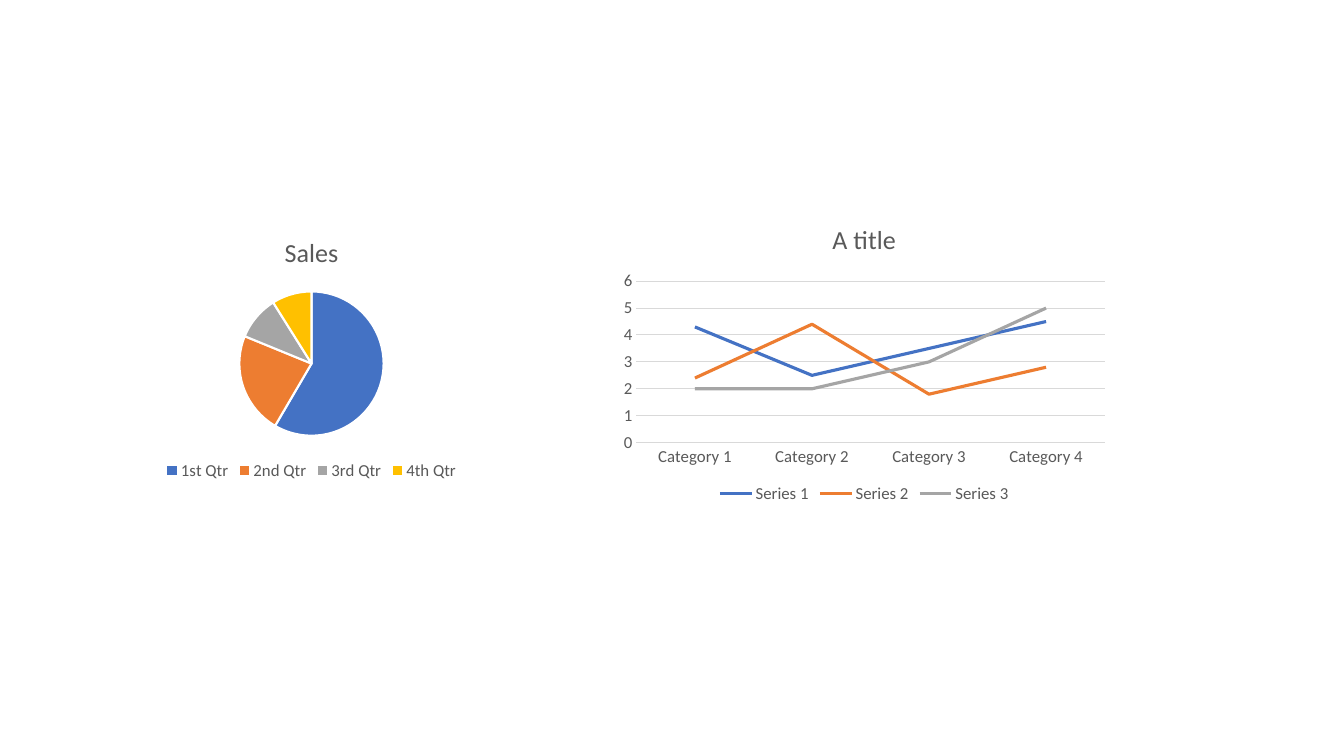
from dataclasses import dataclass

from pptx import Presentation
from pptx.chart.chart import Chart
from pptx.chart.data import CategoryChartData
from pptx.dml.color import RGBColor
from pptx.enum.chart import XL_CHART_TYPE, XL_LEGEND_POSITION, XL_TICK_MARK
from pptx.util import Cm, Pt

PIE = XL_CHART_TYPE.PIE
LINE = XL_CHART_TYPE.LINE
LEGEND_BOTTOM = XL_LEGEND_POSITION.BOTTOM
NO_TICK = XL_TICK_MARK.NONE

FONT = "Calibri"
TEXT_GREY = "595959"
GRID_GREY = "D9D9D9"
WHITE = "FFFFFF"
PALETTE = ["4472C4", "ED7D31", "A5A5A5", "FFC000"]


@dataclass
class ChartSpec:
    kind: XL_CHART_TYPE
    title: str
    left: float
    top: float
    width: float
    height: float
    categories: list[str]
    series: dict[str, list[float]]


CHARTS = [
    ChartSpec(PIE, "Sales", 3.1, 5.51, 9.5, 6.71,
              ["1st Qtr", "2nd Qtr", "3rd Qtr", "4th Qtr"],
              {"Sales": [59, 23, 10, 9]}),
    ChartSpec(LINE, "A title", 15.47, 5.18, 12.62, 7.62,
              [f"Category {number}" for number in range(1, 5)],
              {"Series 1": [4.3, 2.5, 3.5, 4.5],
               "Series 2": [2.4, 4.4, 1.8, 2.8],
               "Series 3": [2, 2, 3, 5]}),
]


def color(value: str) -> RGBColor:
    return RGBColor.from_string(value)


def style_font(font, size: float) -> None:
    font.name = FONT
    font.size = Pt(size)
    font.bold = False
    font.color.rgb = color(TEXT_GREY)


def style_line(line, value: str, width: float) -> None:
    line.color.rgb = color(value)
    line.width = Pt(width)


def add_chart(page, item: ChartSpec) -> Chart:
    """Add a chart with its title and legend."""
    data = CategoryChartData()
    data.categories = item.categories
    for name, values in item.series.items():
        data.add_series(name, values)
    frame = page.shapes.add_chart(
        item.kind, Cm(item.left), Cm(item.top), Cm(item.width), Cm(item.height), data)
    chart = frame.chart
    style_font(chart.font, 12)

    chart.has_title = True
    span = chart.chart_title.text_frame.paragraphs[0].add_run()
    span.text = item.title
    style_font(span.font, 18.6)
    chart.chart_title.include_in_layout = False

    chart.has_legend = True
    chart.legend.position = LEGEND_BOTTOM
    chart.legend.include_in_layout = False
    style_font(chart.legend.font, 12)
    return chart


def style_pie(chart: Chart) -> None:
    plot = chart.plots[0]
    plot.vary_by_categories = True
    for index, value in enumerate(PALETTE):
        slice_format = plot.series[0].points[index].format
        slice_format.fill.solid()
        slice_format.fill.fore_color.rgb = color(value)
        style_line(slice_format.line, WHITE, 1.5)


def style_lines(chart: Chart) -> None:
    chart.plots[0].vary_by_categories = False
    for series, value in zip(chart.plots[0].series, PALETTE):
        series.smooth = False
        style_line(series.format.line, value, 2.25)

    # Axes and gridlines
    for axis in (chart.category_axis, chart.value_axis):
        axis.major_tick_mark = NO_TICK
        axis.minor_tick_mark = NO_TICK
        style_font(axis.tick_labels.font, 12)
    style_line(chart.category_axis.format.line, GRID_GREY, 0.75)
    value_axis = chart.value_axis
    value_axis.format.line.fill.background()
    value_axis.minimum_scale = 0
    value_axis.maximum_scale = 6
    value_axis.major_unit = 1
    value_axis.has_major_gridlines = True
    style_line(value_axis.major_gridlines.format.line, GRID_GREY, 0.75)


def main() -> None:
    deck = Presentation()
    deck.slide_width = Cm(33.87)
    deck.slide_height = Cm(19.05)
    blank_layout = deck.slide_layouts[6]
    page = deck.slides.add_slide(blank_layout)

    stylers = {PIE: style_pie, LINE: style_lines}
    for item in CHARTS:
        stylers[item.kind](add_chart(page, item))

    deck.save("out.pptx")


if __name__ == "__main__":
    main()
